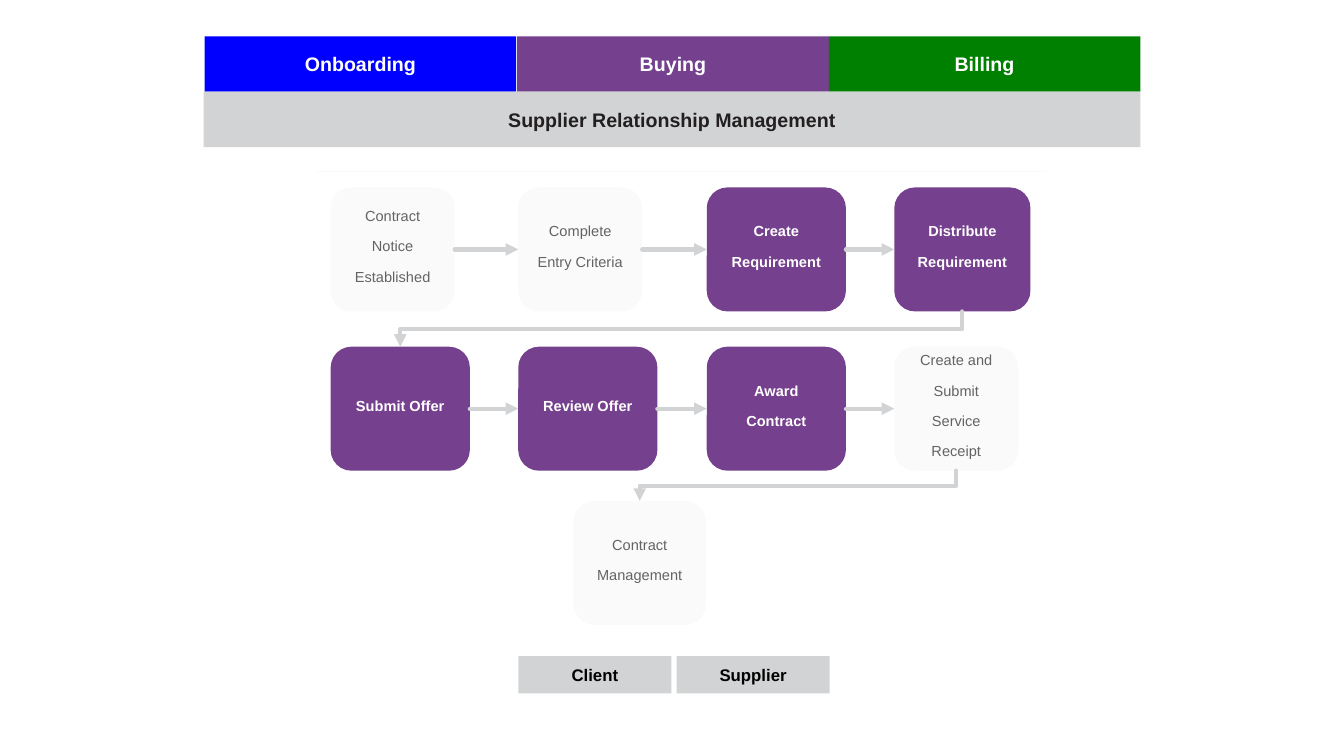
from dataclasses import dataclass

from lxml import etree
from pptx import Presentation
from pptx import util as u
from pptx.dml.color import RGBColor
from pptx.enum import shapes, text
from pptx.oxml.ns import qn

PX = 9144  # EMU per px, 100 px to the inch


@dataclass(frozen=True)
class Theme:
    font: str = "Arial"
    onboarding: str = "0000FF"
    buying: str = "75408D"
    billing: str = "008000"
    grey: str = "D1D3D4"
    pale: str = "FAFAFA"
    white: str = "FFFFFF"
    black: str = "000000"
    dark_text: str = "231F20"
    muted_text: str = "646363"
    heading_size: int = 14
    step_size: int = 18
    role_size: int = 12
    rule_width: float = 0.5
    arrow_width: float = 3


class ProcessSlide:
    def __init__(self, presentation, theme):
        self.theme = theme
        self.slide = presentation.slides.add_slide(presentation.slide_layouts[6])

    def block(self, box, label, fill, color, size, bold=True, rounded=False):
        """Add a filled shape with one centred label."""
        kind = shapes.MSO_SHAPE.ROUNDED_RECTANGLE if rounded else shapes.MSO_SHAPE.RECTANGLE
        shape = self.slide.shapes.add_shape(kind, *(length * PX for length in box))
        shape.shadow.inherit = False
        shape.fill.solid()
        shape.fill.fore_color.rgb = RGBColor.from_string(fill)
        shape.line.fill.background()
        frame = shape.text_frame
        frame.word_wrap = True
        frame.vertical_anchor = text.MSO_ANCHOR.MIDDLE
        paragraph = frame.paragraphs[0]
        paragraph.alignment = text.PP_ALIGN.CENTER
        run = paragraph.add_run()
        run.text = label
        run.font.name = self.theme.font
        run.font.size = u.Pt(size)
        run.font.bold = bold
        run.font.color.rgb = RGBColor.from_string(color)
        return shape

    def step(self, box, label, active):
        """Add a process step; its label is raised by 30 %."""
        theme = self.theme
        fill, color = (theme.buying, theme.white) if active else (theme.pale, theme.muted_text)
        shape = self.block(box, label, fill, color, theme.step_size, active, rounded=True)
        run = shape.text_frame.paragraphs[0].runs[0]
        run.font._element.set("baseline", "30000")
        return shape

    def line(self, start, end, color, width, kind=shapes.MSO_CONNECTOR.STRAIGHT):
        points = [length * PX for length in (*start, *end)]
        connector = self.slide.shapes.add_connector(kind, *points)
        connector.line.color.rgb = RGBColor.from_string(color)
        connector.line.width = u.Pt(width)
        etree.SubElement(connector._element.spPr, qn("a:effectLst"))
        return connector

    def arrow(self, source, target, down=False):
        """Join two steps, sideways or by an elbow from bottom to top."""
        kind = shapes.MSO_CONNECTOR.ELBOW if down else shapes.MSO_CONNECTOR.STRAIGHT
        connector = self.line((0, 0), (0, 0), self.theme.grey, self.theme.arrow_width, kind)
        outline = connector.line._get_or_add_ln()
        outline.set("cap", "rnd")
        etree.SubElement(outline, qn("a:tailEnd"), type="triangle")
        # Connection sites: 0 top, 1 left, 2 bottom, 3 right
        connector.begin_connect(source, 2 if down else 3)
        connector.end_connect(target, 0 if down else 1)
        if down:
            self.turn_down(connector)

    def turn_down(self, connector):
        """Turn an elbow by 90 degrees about its centre, so it leaves downwards."""
        run, drop = connector.width, connector.height
        center_x = connector.left + run // 2
        center_y = connector.top + drop // 2
        frame = connector._element.spPr.find(qn("a:xfrm"))
        frame.attrib.pop("flipH", None)
        frame.set("rot", "5400000")
        connector.left, connector.top = center_x - drop // 2, center_y - run // 2
        connector.width, connector.height = drop, run


def main():
    theme = Theme()
    presentation = Presentation()
    presentation.slide_width = 1333 * PX
    presentation.slide_height = 750 * PX
    page = ProcessSlide(presentation, theme)

    # Phase bands
    phases = [("Onboarding", theme.onboarding), ("Buying", theme.buying),
              ("Billing", theme.billing)]
    for index, (label, fill) in enumerate(phases):
        box = (203 + round(index * 309.5), 36, 309, 55)
        page.block(box, label, fill, theme.white, theme.heading_size)
    page.block((202, 91, 929, 55), "Supplier Relationship Management",
               theme.grey, theme.dark_text, theme.heading_size)
    page.line((312, 170), (1037, 170), theme.pale, theme.rule_width)

    # Process steps: label, width, active
    rows = [
        (186, [("Contract Notice Established", 123, False),
               ("Complete Entry Criteria", 123, False),
               ("Create Requirement", 138, True),
               ("Distribute Requirement", 135, True)]),
        (344, [("Submit Offer", 138, True),
               ("Review Offer", 138, True),
               ("Award Contract", 138, True),
               ("Create and Submit Service Receipt", 123, False)]),
    ]
    step_height = 123
    chains = []
    for top, steps in rows:
        chains.append([
            page.step((328 + round(column * 186.33), top, width, step_height), label, active)
            for column, (label, width, active) in enumerate(steps)])
    chains.append([page.step((569, 497, 131, step_height), "Contract Management", False)])

    # Arrows along each row, then down to the next
    for index, chain in enumerate(chains):
        for source, target in zip(chain, chain[1:]):
            page.arrow(source, target)
        if index + 1 < len(chains):
            page.arrow(chain[-1], chains[index + 1][0], down=True)

    # Roles
    for index, label in enumerate(["Client", "Supplier"]):
        page.block((514 + index * 157, 651, 152, 37), label,
                   theme.grey, theme.black, theme.role_size)

    presentation.save("out.pptx")


if __name__ == "__main__":
    main()
